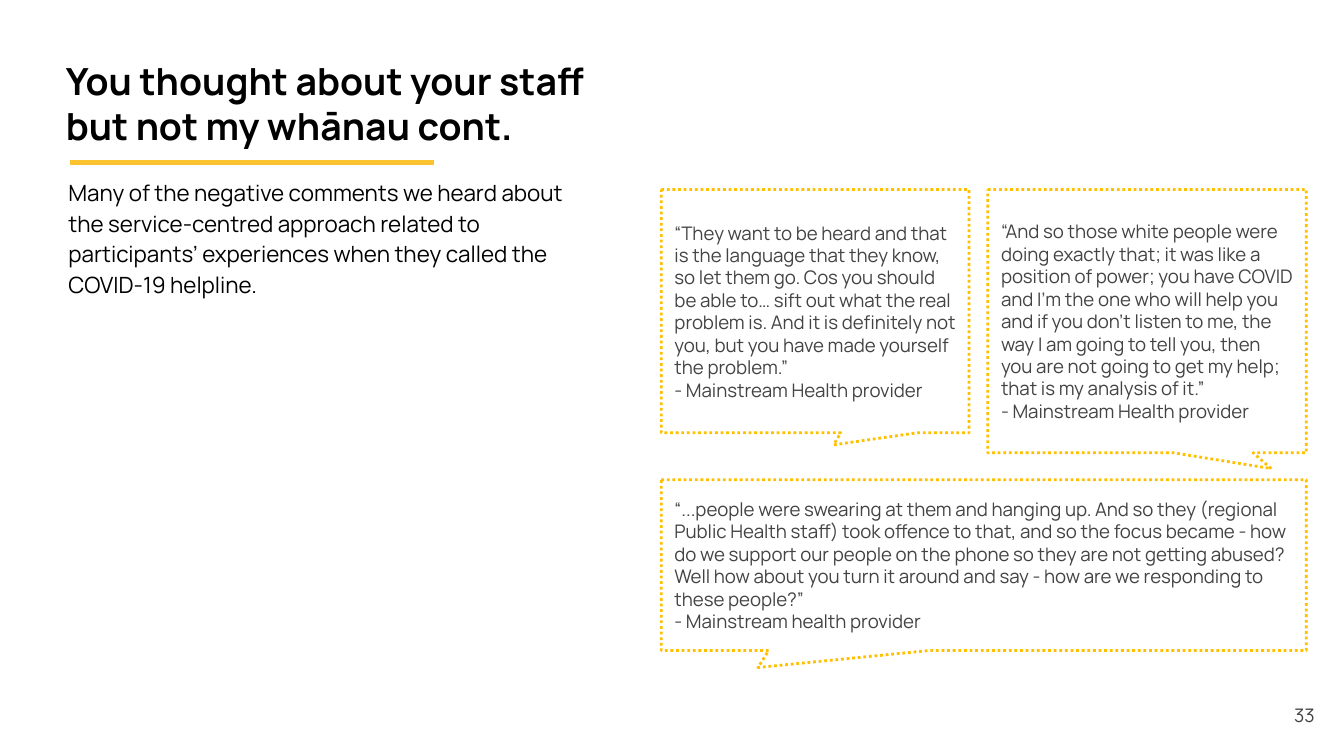
from lxml.etree import SubElement
from pptx import Presentation
from pptx.dml.color import RGBColor
from pptx.enum.dml import MSO_LINE
from pptx.enum.shapes import MSO_CONNECTOR, MSO_SHAPE
from pptx.enum.text import MSO_ANCHOR, PP_ALIGN
from pptx.oxml.ns import qn
from pptx.util import Inches, Pt

BLACK = RGBColor(0x00, 0x00, 0x00)
GREY = RGBColor(0x43, 0x43, 0x43)
WHITE = RGBColor(0xFF, 0xFF, 0xFF)
GOLD = RGBColor(0xFA, 0xC3, 0x2F)
AMBER = RGBColor(0xFF, 0xC0, 0x00)

QUOTE_LEFT, QUOTE_TOP = 4.92, 1.41
LINE_BREAK = "\v"

# Position and size, callout tip, paragraphs
QUOTES = [
    ((QUOTE_LEFT, QUOTE_TOP, 2.29, 1.81), (0.06, 0.55), [
        "“They want to be heard and that is the language that they know, so let them go. "
        "Cos you should be able to… sift out what the real problem is. And it is definitely "
        "not you, but you have made yourself the problem.”",
        "- Mainstream Health provider"]),
    ((7.35, QUOTE_TOP, 2.37, 1.96), (0.39, 0.56), [
        "“And so those white people were doing exactly that; it was like a position of power; "
        "you have COVID and I’m the one who will help you and if you don’t listen to me, the "
        "way I am going to tell you, then you are not going to get my help; that is my "
        "analysis of it.”",
        "- Mainstream Health provider"]),
    ((QUOTE_LEFT, 3.57, 4.8, 1.27), (-0.35, 0.6), [
        "“...people were swearing at them and hanging up. And so they (regional Public Health "
        "staff) took offence to that, and so the focus became - how do we support our people "
        "on the phone so they are not getting abused? Well how about you turn it around and "
        "say - how are we responding to these people?” " + LINE_BREAK +
        "- Mainstream health provider"]),
]


class SlideBuilder:
    """Holds the text style and the current slide."""

    font_name = "Manrope"

    def __init__(self, deck):
        self.page = deck.slides.add_slide(deck.slide_layouts[6])

    def fill_text(self, shape, lines, size, color, inset=0.0, anchor=MSO_ANCHOR.TOP,
                  align=PP_ALIGN.LEFT, bold=False):
        """Write one paragraph per line and return the paragraphs."""
        frame = shape.text_frame
        frame.word_wrap = True
        frame.vertical_anchor = anchor
        frame.margin_left = frame.margin_right = Inches(inset)
        frame.margin_top = frame.margin_bottom = Inches(inset)
        frame.text = "\n".join(lines)
        for para in frame.paragraphs:
            para.alignment = align
            para.font.name = self.font_name
            para.font.size = Pt(size)
            para.font.bold = bold
            para.font.color.rgb = color
        return frame.paragraphs

    def text(self, bounds, content, size, color, **style):
        box = self.page.shapes.add_textbox(*map(Inches, bounds))
        return self.fill_text(box, [content], size, color, **style)[0]

    def rule(self, left, right, top, color, width):
        line = self.page.shapes.add_connector(
            MSO_CONNECTOR.STRAIGHT, Inches(left), Inches(top), Inches(right), Inches(top))
        line.line.color.rgb = color
        line.line.width = Pt(width)
        SubElement(line.element.spPr, qn("a:effectLst"))

    def quote(self, bounds, tip, lines):
        callout = self.page.shapes.add_shape(
            MSO_SHAPE.RECTANGULAR_CALLOUT, *map(Inches, bounds))
        callout.adjustments[0], callout.adjustments[1] = tip
        callout.shadow.inherit = False
        callout.fill.solid()
        callout.fill.fore_color.rgb = WHITE
        callout.line.color.rgb = AMBER
        callout.line.width = Pt(1.5)
        callout.line.dash_style = MSO_LINE.ROUND_DOT
        self.fill_text(callout, lines, 10, GREY, inset=0.1, anchor=MSO_ANCHOR.MIDDLE)


def main():
    deck = Presentation()
    deck.slide_width = Inches(10)
    deck.slide_height = Inches(10 * 9 / 16)
    builder = SlideBuilder(deck)

    builder.rule(0.52, 3.23, 1.21, GOLD, 3)
    builder.text((0.49, 0.4, 4.14, 0.7),
                 "You thought about your staff but not my whānau cont.",
                 20, BLACK, anchor=MSO_ANCHOR.BOTTOM, bold=True)
    body = builder.text((0.51, 1.3, 3.87, 3.68),
                        "Many of the negative comments we heard about the service-centred "
                        "approach related to participants’ experiences when they called the "
                        "COVID-19 helpline.", 12, BLACK)
    body.line_spacing = 1.15
    body.space_before = Pt(6)

    for quote in QUOTES:
        builder.quote(*quote)

    builder.text((9.41, 5.02, 0.59, 0.6), "33", 10, GREY, inset=0.1,
                 anchor=MSO_ANCHOR.MIDDLE, align=PP_ALIGN.CENTER)
    deck.save("out.pptx")


if __name__ == "__main__":
    main()
